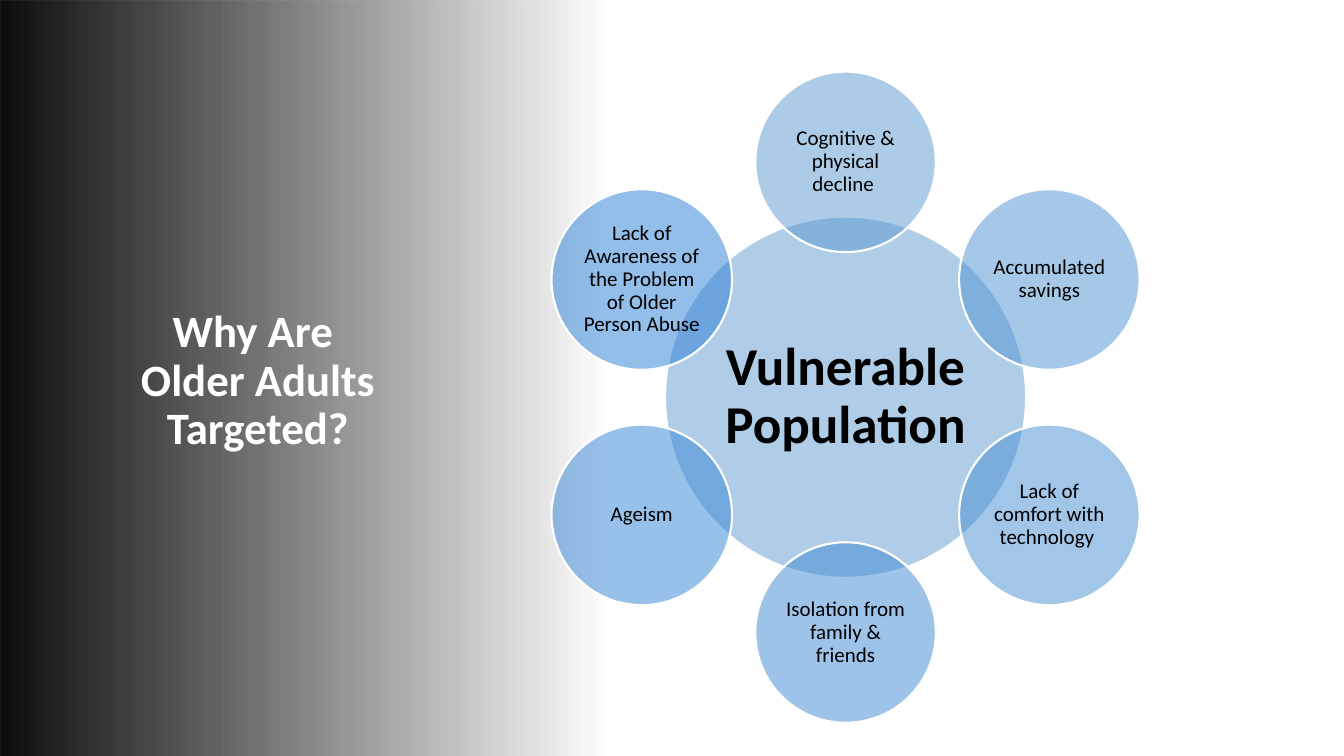
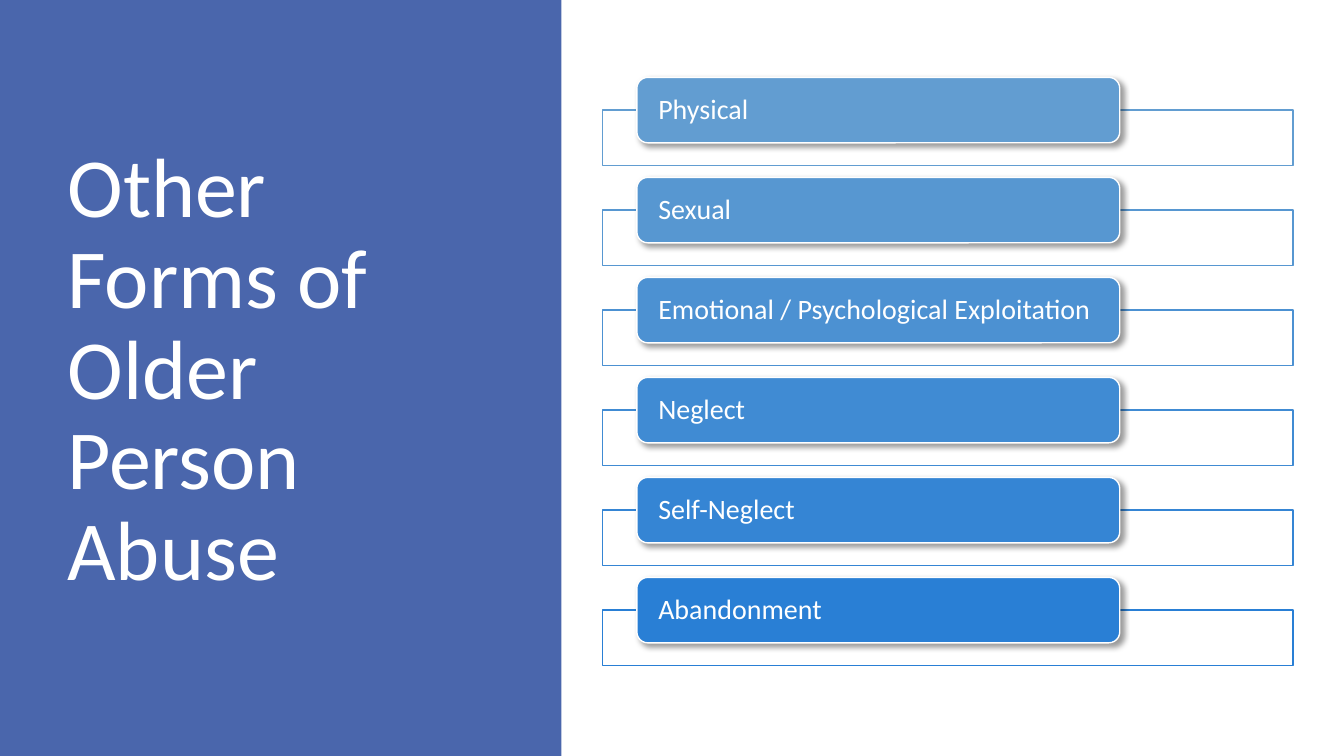
"""Build two slides on why older adults are targeted and on other forms of abuse."""
from math import cos, radians, sin

from lxml.etree import SubElement
from pptx import Presentation
from pptx.dml.color import RGBColor
from pptx.enum.shapes import MSO_SHAPE
from pptx.enum.text import MSO_ANCHOR, PP_ALIGN
from pptx.oxml.ns import qn
from pptx.util import Cm, Pt

WIDTH, HEIGHT = 33.87, 19.05
WHITE, BLACK, NIGHT, INDIGO = "FFFFFF", "000000", "0D0D0D", "4A66AC"
FIRST_BLUE, LAST_BLUE = "629DD1", "297FD5"
FONT = "Calibri"

TARGET_TITLE = "Why Are \nOlder Adults Targeted?"
HUB = "Vulnerable Population"
REASONS = [
    "Cognitive & physical decline ",
    "Accumulated savings",
    "Lack of comfort with technology ",
    "Isolation from family & friends",
    "Ageism",
    "Lack of Awareness of the Problem of Older Person Abuse",
]
HUB_CENTRE, HUB_SIZE = (21.31, 10.01), 9.1
REASON_SIZE, RING_RADIUS = 4.55, 5.93

FORMS_TITLE = "Other Forms of Older Person Abuse"
FORMS = [
    "Physical",
    "Sexual",
    "Emotional / Psychological Exploitation",
    "Neglect",
    "Self-Neglect",
    "Abandonment",
]
PANEL_WIDTH = 14.15
FRAME_LEFT, FRAME_TOP, FRAME_WIDTH, FRAME_HEIGHT = 15.19, 2.77, 17.4, 1.4
LABEL_LEFT, LABEL_TOP, LABEL_WIDTH, LABEL_HEIGHT = 16.05, 1.95, 12.17, 1.65
ROW_PITCH = 2.52

CENTRED = {"alignment": PP_ALIGN.CENTER, "line_spacing": 0.9}
LEFT = {"alignment": PP_ALIGN.LEFT, "line_spacing": 0.9}
TARGET_STYLE = {"size": Pt(32), "bold": True}
FORMS_STYLE = {"size": Pt(60)}
HUB_STYLE = {"size": Pt(38), "bold": True}
REASON_STYLE = {"size": Pt(15)}
LABEL_STYLE = {"size": Pt(20)}
SHADOW = {"blurRad": Pt(4), "dist": Pt(3), "dir": 45 * 60000, "algn": "tl", "rotWithShape": 0}


def colour(value):
    return RGBColor.from_string(value)


def blues(count):
    ends = list(zip(colour(FIRST_BLUE), colour(LAST_BLUE)))
    return [
        "".join(f"{a + int((b - a) * step / (count - 1)):02X}" for a, b in ends)
        for step in range(count)
    ]


def apply(target, values):
    for name, value in values.items():
        setattr(target, name, value)


def set_alpha(element, percent):
    last = element.findall(".//" + qn("a:srgbClr"))[-1]
    SubElement(last, qn("a:alpha"), val=str(percent * 1000))


def add_shape(page, kind, place, fill=None, alpha=None, line=None, weight=1):
    shape = page.shapes.add_shape(kind, *map(Cm, place))
    shape.shadow.inherit = False
    if fill:
        shape.fill.solid()
        shape.fill.fore_color.rgb = colour(fill)
    if alpha:
        set_alpha(shape._element.spPr, alpha)
    if line:
        shape.line.color.rgb = colour(line)
        shape.line.width = Pt(weight)
    else:
        shape.line.fill.background()
    return shape


def write(box, text, ink, style, layout, margins=None):
    frame = box.text_frame
    apply(frame, {"word_wrap": True, "vertical_anchor": MSO_ANCHOR.MIDDLE})
    if margins:
        sides = ("margin_left", "margin_top", "margin_right", "margin_bottom")
        apply(frame, dict(zip(sides, map(Cm, margins))))
    para = frame.paragraphs[0]
    para.text = text.replace("\n", "\v")
    apply(para, layout)
    for span in para.runs:
        apply(span.font, {"name": FONT, **style})
        span.font.color.rgb = colour(ink)


def add_title(page, text, place, style, layout):
    write(page.shapes.add_textbox(*map(Cm, place)), text, WHITE, style, layout)


def add_fade(page):
    band = add_shape(page, MSO_SHAPE.RECTANGLE, (0, 0, WIDTH, HEIGHT))
    band.fill.gradient()
    band.fill.gradient_angle = 0
    for stop, position in zip(band.fill.gradient_stops, (0, 0.45)):
        stop.color.rgb = colour(NIGHT)
        stop.position = position
    set_alpha(band._element.spPr.find(qn("a:gradFill")), 0)


def add_circle(page, centre, size, fill, text, style, margin):
    place = (centre[0] - size / 2, centre[1] - size / 2, size, size)
    circle = add_shape(page, MSO_SHAPE.OVAL, place, fill, 50, WHITE, 1.5)
    write(circle, text, BLACK, style, CENTRED, [margin] * 4)


def add_shadow(shape):
    effects = shape._element.spPr.find(qn("a:effectLst"))
    values = {name: str(value) for name, value in SHADOW.items()}
    outer = SubElement(effects, qn("a:outerShdw"), values)
    SubElement(outer, qn("a:srgbClr"), val=BLACK)
    set_alpha(outer, 40)


def build_targets(page):
    add_fade(page)
    add_title(page, TARGET_TITLE, (2.84, 6.07, 7.32, 7.09), TARGET_STYLE, CENTRED)
    hub_fill, *fills = blues(len(REASONS) + 1)
    add_circle(page, HUB_CENTRE, HUB_SIZE, hub_fill, HUB, HUB_STYLE, 0.12)
    for index, (reason, fill) in enumerate(zip(REASONS, fills)):
        angle = radians(360 / len(REASONS) * index)
        centre = (
            HUB_CENTRE[0] + RING_RADIUS * sin(angle),
            HUB_CENTRE[1] - RING_RADIUS * cos(angle),
        )
        add_circle(page, centre, REASON_SIZE, fill, reason, REASON_STYLE, 0.05)


def build_forms(page):
    add_shape(page, MSO_SHAPE.RECTANGLE, (0, 0, PANEL_WIDTH, HEIGHT), INDIGO)
    add_title(page, FORMS_TITLE, (1.45, 1.73, 10.57, 15.29), FORMS_STYLE, LEFT)
    for index, (form, fill) in enumerate(zip(FORMS, blues(len(FORMS)))):
        drop = index * ROW_PITCH
        frame = (FRAME_LEFT, FRAME_TOP + drop, FRAME_WIDTH, FRAME_HEIGHT)
        add_shape(page, MSO_SHAPE.RECTANGLE, frame, WHITE, 90, fill)
        place = (LABEL_LEFT, LABEL_TOP + drop, LABEL_WIDTH, LABEL_HEIGHT)
        label = add_shape(page, MSO_SHAPE.ROUNDED_RECTANGLE, place, fill, line=WHITE)
        add_shadow(label)
        write(label, form, WHITE, LABEL_STYLE, LEFT, (0.46, 0, 0.46, 0))


def main():
    deck = Presentation()
    apply(deck, {"slide_width": Cm(WIDTH), "slide_height": Cm(HEIGHT)})
    for build in (build_targets, build_forms):
        build(deck.slides.add_slide(deck.slide_layouts[6]))
    deck.save("out.pptx")


if __name__ == "__main__":
    main()
